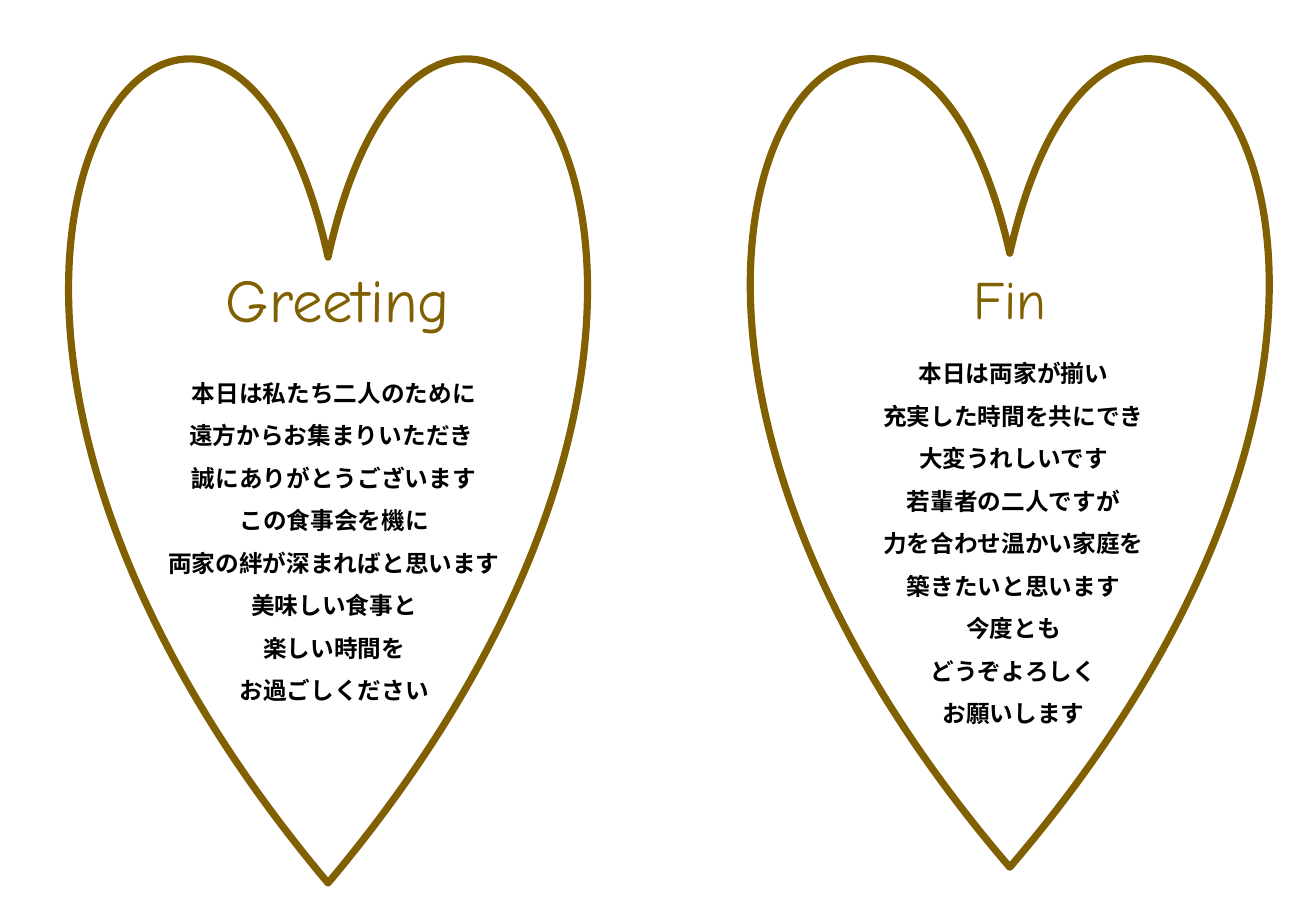
from lxml import etree
from pptx import Presentation
from pptx.dml.color import RGBColor
from pptx.enum.shapes import MSO_SHAPE
from pptx.enum.text import MSO_ANCHOR, MSO_AUTO_SIZE, PP_ALIGN
from pptx.oxml.ns import qn
from pptx.util import Inches, Pt

HEART = MSO_SHAPE.HEART
CENTER = PP_ALIGN.CENTER
TOP, MIDDLE = MSO_ANCHOR.TOP, MSO_ANCHOR.MIDDLE
NO_FIT = MSO_AUTO_SIZE.NONE
GOLD = RGBColor(0x80, 0x60, 0x00)
BLACK = RGBColor(0x00, 0x00, 0x00)
HEADING_FONT = "Comic Neue"
BODY_FONT = "Noto Sans CJK JP"

CARDS = [
    {
        "heading": "Greeting", "size": 36,
        "heart": (0.58, 0.4, 4.24, 6.87),
        "heading_box": (1.26, 2, 3.04, 0.98),
        "body_box": (0.68, 2.95, 4.14, 3.82),
        "lines": [
            "本日は私たち二人のために",
            "遠方からお集まりいただき ",
            "誠にありがとうございます",
            "この食事会を機に",
            "両家の絆が深まればと思います",
            "美味しい食事と",
            "楽しい時間を",
            "お過ごしください",
        ],
    },
    {
        "heading": "Fin", "size": 32,
        "heart": (6.19, 0.4, 4.24, 6.74),
        "heading_box": (6.19, 2.17, 4.24, 0.63),
        "body_box": (6.27, 2.79, 4.14, 3.82),
        "lines": [
            "本日は両家が揃い",
            "充実した時間を共にでき",
            "大変うれしいです",
            "若輩者の二人ですが",
            "力を合わせ温かい家庭を",
            "築きたいと思います",
            "今度とも",
            "どうぞよろしく",
            "お願いします",
        ],
    },
]


def place(sp, box):
    sp.left, sp.top, sp.width, sp.height = map(Inches, box)


def write(sp, box, lines, font, size, color, bold, spacing, anchor):
    place(sp, box)
    tf = sp.text_frame
    tf.text = "\n".join(lines)
    tf.word_wrap = True
    tf.auto_size = NO_FIT
    tf.vertical_anchor = anchor
    for p in tf.paragraphs:
        p.alignment = CENTER
        p.line_spacing = spacing
        p.space_before = Pt(0)
        pPr = p._p.get_or_add_pPr()
        pPr.set("marL", "0")
        pPr.set("indent", "0")
        etree.SubElement(pPr, qn("a:buNone"))
        for r in p.runs:
            r.font.name = font
            r.font.size = Pt(size)
            r.font.bold = bold
            r.font.color.rgb = color
            ea = etree.SubElement(r._r.get_or_add_rPr(), qn("a:ea"))
            ea.set("typeface", font)


def add_heart(slide, box):
    sp = slide.shapes.add_shape(HEART, *map(Inches, box))
    sp.shadow.inherit = False
    sp.fill.background()
    sp.line.color.rgb = GOLD
    sp.line.width = Pt(4.25)


def main():
    prs = Presentation()
    prs.slide_width, prs.slide_height = Inches(10.83), Inches(7.5)
    slide = prs.slides.add_slide(prs.slide_layouts[3])
    headings = [slide.shapes.title,
                slide.shapes.add_textbox(0, 0, 0, 0)]
    bodies = [slide.placeholders[1], slide.placeholders[2]]

    for card, heading, body in zip(CARDS, headings, bodies):
        add_heart(slide, card["heart"])
        write(heading, card["heading_box"], [card["heading"]],
              HEADING_FONT, card["size"], GOLD, False, 0.9, MIDDLE)
        write(body, card["body_box"], card["lines"],
              BODY_FONT, 14, BLACK, True, 1.5, TOP)

    prs.save("out.pptx")


if __name__ == "__main__":
    main()
